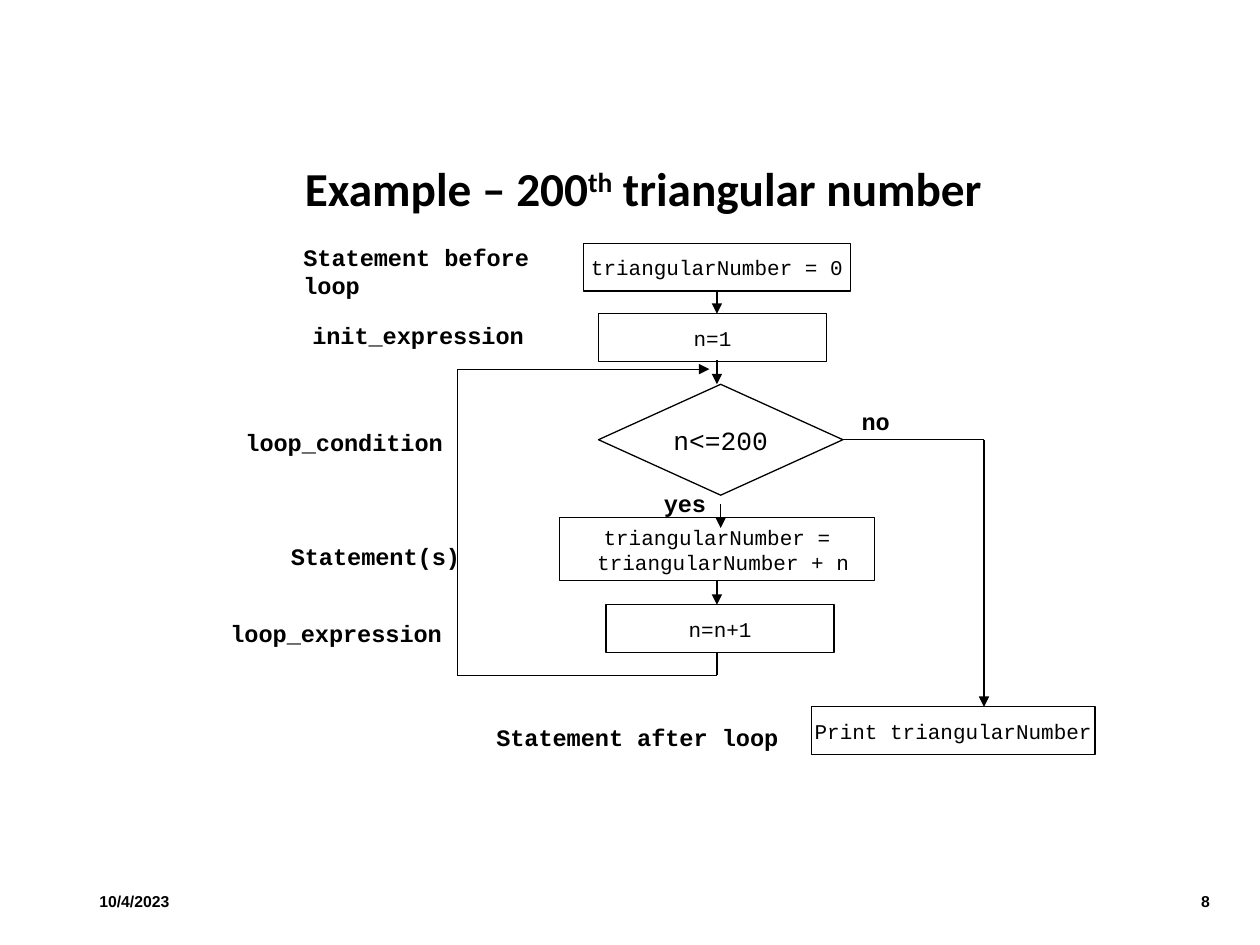
"""Build a flowchart slide for the 200th triangular number loop."""
from lxml.etree import SubElement
from pptx import Presentation
from pptx.dml.color import RGBColor
from pptx.enum.shapes import MSO_CONNECTOR, MSO_SHAPE
from pptx.enum.text import MSO_ANCHOR, MSO_AUTO_SIZE, PP_ALIGN
from pptx.oxml.ns import qn
from pptx.util import Inches, Pt

BLACK = RGBColor(0, 0, 0)
CODE_FONT = "Courier New"
LINE_WIDTH = Pt(0.75)

TITLE = [("Example – 200", None), ("th", 30000), (" triangular number", None)]
TITLE_AREA = (2.32, 1.24, 5.88, 0.56)

PROCESS, DECISION = MSO_SHAPE.FLOWCHART_PROCESS, MSO_SHAPE.FLOWCHART_DECISION
STEPS = [
    (PROCESS, ["triangularNumber = 0"], 12, (4.63, 1.93, 2.12, 0.38)),
    (PROCESS, ["n=1"], 12, (4.75, 2.49, 1.81, 0.38)),
    (DECISION, ["n<=200"], 15, (4.75, 3.05, 1.94, 0.88)),
    (PROCESS, ["triangularNumber =", " triangularNumber + n"], 12, (4.44, 4.11, 2.5, 0.5)),
    (PROCESS, ["n=n+1"], 12, (4.81, 4.8, 1.81, 0.38)),
    (PROCESS, ["Print triangularNumber"], 12, (6.44, 5.61, 2.25, 0.38)),
]
LABELS = [
    ("Statement before loop", (2.31, 1.88, 2.44, 0.56), True),
    ("init_expression", (2.38, 2.5, 1.91, 0.33), False),
    ("loop_condition", (1.85, 3.35, 1.8, 0.33), False),
    ("Statement(s)", (2.21, 4.25, 1.57, 0.33), False),
    ("loop_expression", (1.73, 4.86, 1.91, 0.33), False),
    ("Statement after loop", (3.84, 5.69, 2.48, 0.33), False),
    ("yes", (5.17, 3.83, 0.54, 0.33), False),
    ("no", (6.74, 3.18, 0.43, 0.33), False),
]
FOOTERS = [
    ("10/4/2023", (0.69, 6.95, 0.95, 0.4), PP_ALIGN.LEFT),
    ("8", (9.31, 6.95, 0.39, 0.4), PP_ALIGN.RIGHT),
]

FLOW_X, LOOP_X, EXIT_X = 5.69, 3.63, 7.81
LOOP_TOP, LOOP_BOTTOM, EXIT_TOP = 2.93, 5.36, 3.49
ROUTES = [
    [(FLOW_X, 2.3), (FLOW_X, 2.49)],
    [(FLOW_X, 2.86), (FLOW_X, 3.05)],
    [(5.72, 4), (5.72, 4.19)],
    [(FLOW_X, 4.61), (FLOW_X, 4.8)],
    [(FLOW_X, 5.18), (FLOW_X, LOOP_BOTTOM), (LOOP_X, LOOP_BOTTOM),
     (LOOP_X, LOOP_TOP), (5.63, LOOP_TOP)],
    [(6.69, EXIT_TOP), (EXIT_X, EXIT_TOP), (EXIT_X, 5.61)],
]


def inches(values):
    return [Inches(value) for value in values]


def add_span(para, text, font_name, size, bold):
    span = para.add_run()
    span.text = text
    span.font.name = font_name
    span.font.size = Pt(size)
    span.font.bold = bold
    span.font.color.rgb = BLACK
    return span


def add_title(page):
    title = page.shapes.title
    title.left, title.top, title.width, title.height = inches(TITLE_AREA)
    frame = title.text_frame
    frame.auto_size = MSO_AUTO_SIZE.NONE
    frame.vertical_anchor = MSO_ANCHOR.MIDDLE
    para = frame.paragraphs[0]
    para.alignment = PP_ALIGN.LEFT
    para.line_spacing = 0.9
    for text, baseline in TITLE:
        span = add_span(para, text, "Calibri", 27, True)
        if baseline:
            span.font._element.set("baseline", str(baseline))


def add_step(page, kind, lines, size, area):
    step = page.shapes.add_shape(kind, *inches(area))
    step.shadow.inherit = False
    step.fill.background()
    step.line.color.rgb = BLACK
    step.line.width = LINE_WIDTH
    frame = step.text_frame
    frame.word_wrap = False
    frame.vertical_anchor = MSO_ANCHOR.MIDDLE
    for index, line in enumerate(lines):
        para = frame.add_paragraph() if index else frame.paragraphs[0]
        para.alignment = PP_ALIGN.CENTER
        add_span(para, line, CODE_FONT, size, False)


def add_text(page, text, area, font_name, size, wrap):
    box = page.shapes.add_textbox(*inches(area))
    frame = box.text_frame
    frame.word_wrap = wrap
    add_span(frame.paragraphs[0], text, font_name, size, True)
    return frame


def add_line(page, start, end, arrow):
    line = page.shapes.add_connector(MSO_CONNECTOR.STRAIGHT, *inches(start + end))
    line.line.color.rgb = BLACK
    line.line.width = LINE_WIDTH
    if arrow:
        SubElement(line.line._get_or_add_ln(), qn("a:tailEnd"), type="triangle")
    SubElement(line._element.spPr, qn("a:effectLst"))


def main():
    deck = Presentation()
    deck.slide_width, deck.slide_height = inches((10, 7.5))
    page = deck.slides.add_slide(deck.slide_layouts[5])
    add_title(page)
    for text, area, alignment in FOOTERS:
        frame = add_text(page, text, area, "Arial", 9, True)
        frame.vertical_anchor = MSO_ANCHOR.MIDDLE
        frame.paragraphs[0].alignment = alignment
    for step in STEPS:
        add_step(page, *step)
    for route in ROUTES:
        for start, end in zip(route, route[1:]):
            add_line(page, start, end, end == route[-1])
    for text, area, wrap in LABELS:
        frame = add_text(page, text, area, CODE_FONT, 13.5, wrap)
        frame.auto_size = MSO_AUTO_SIZE.SHAPE_TO_FIT_TEXT
    deck.save("out.pptx")


if __name__ == "__main__":
    main()
